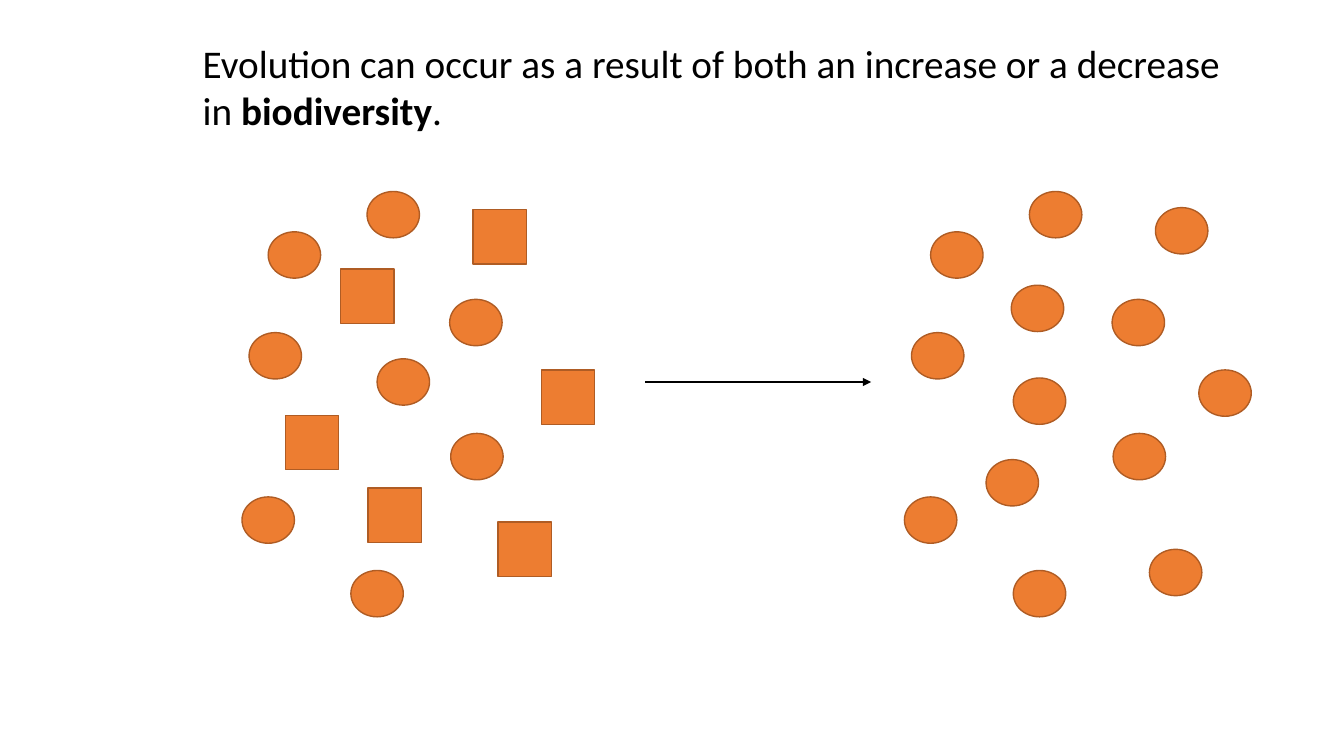
from lxml import etree
from pptx import Presentation
from pptx.dml.color import RGBColor
from pptx.enum.shapes import MSO_CONNECTOR, MSO_SHAPE
from pptx.enum.text import MSO_ANCHOR, MSO_AUTO_SIZE, PP_ALIGN
from pptx.oxml.ns import qn
from pptx.util import Inches, Pt

OVAL = MSO_SHAPE.OVAL
RECTANGLE = MSO_SHAPE.RECTANGLE
STRAIGHT = MSO_CONNECTOR.STRAIGHT
TOP = MSO_ANCHOR.TOP
LEFT = PP_ALIGN.LEFT
NO_AUTOFIT = MSO_AUTO_SIZE.NONE

COLORS = {"organism": "ED7D31", "outline": "AF5C24", "ink": "000000"}
FONT = "Calibri"
TITLE_ONLY_LAYOUT = 5
GRID_CELL = Inches(1)
SLIDE_COLUMNS, SLIDE_ROWS = 13.33, 7.5

ROUND_SIZE = (0.52, 0.46)
SQUARE_SIZE = (0.53, 0.54)
POPULATION_SHIFT = 6.57

SHARED_ROUNDS = [(2.66, 2.3), (4.46, 2.97), (3.64, 1.9), (2.47, 3.3),
                 (3.48, 5.66), (4.47, 4.3), (2.4, 4.93)]
BEFORE_ROUNDS = [(3.74, 3.56)]
BEFORE_SQUARES = [(3.38, 2.67), (4.69, 2.08), (3.65, 4.84),
                  (2.83, 4.12), (5.37, 3.67), (4.94, 5.18)]
AFTER_ROUNDS = [(10.05, 3.75), (11.4, 5.45), (11.46, 2.06),
                (11.89, 3.67), (9.78, 4.56), (10.03, 2.83)]

TITLE_RUNS = [
    ("Evolution can occur as a result of both an increase or a decrease in ", False),
    ("biodiversity", True),
    (".", False),
]


def cells(*counts):
    return [round(count * GRID_CELL) for count in counts]


def color(name):
    return RGBColor.from_string(COLORS[name])


def add_title(slide):
    title = slide.shapes.title
    title.left, title.top, title.width, title.height = cells(1.91, 0.34, 10.5, 1.04)
    frame = title.text_frame
    frame.word_wrap = True
    frame.auto_size = NO_AUTOFIT
    frame.vertical_anchor = TOP
    paragraph = frame.paragraphs[0]
    paragraph.alignment = LEFT
    for text, bold in TITLE_RUNS:
        run = paragraph.add_run()
        run.text = text
        run.font.name = FONT
        run.font.size = Pt(28)
        run.font.bold = bold
        run.font.color.rgb = color("ink")


def add_organisms(slide, kind, size, positions):
    for position in positions:
        shape = slide.shapes.add_shape(kind, *cells(*position, *size))
        shape.shadow.inherit = False
        shape.fill.solid()
        shape.fill.fore_color.rgb = color("organism")
        shape.line.color.rgb = color("outline")
        shape.line.width = Pt(1)


def add_arrow(slide, start, end):
    arrow = slide.shapes.add_connector(STRAIGHT, *cells(*start, *end))
    arrow.line.color.rgb = color("ink")
    arrow.line.width = Pt(1.5)
    line = arrow.line._get_or_add_ln()
    etree.SubElement(line, qn("a:tailEnd"), type="triangle")
    etree.SubElement(arrow._element.spPr, qn("a:effectLst"))


def main():
    presentation = Presentation()
    presentation.slide_width, presentation.slide_height = cells(SLIDE_COLUMNS, SLIDE_ROWS)
    slide = presentation.slides.add_slide(presentation.slide_layouts[TITLE_ONLY_LAYOUT])
    survivors = [(column + POPULATION_SHIFT, row) for column, row in SHARED_ROUNDS]

    add_title(slide)
    add_organisms(slide, OVAL, ROUND_SIZE, SHARED_ROUNDS + BEFORE_ROUNDS)
    add_organisms(slide, RECTANGLE, SQUARE_SIZE, BEFORE_SQUARES)
    add_organisms(slide, OVAL, ROUND_SIZE, survivors + AFTER_ROUNDS)
    add_arrow(slide, (6.4, 3.79), (8.64, 3.79))
    presentation.save("out.pptx")


if __name__ == "__main__":
    main()
